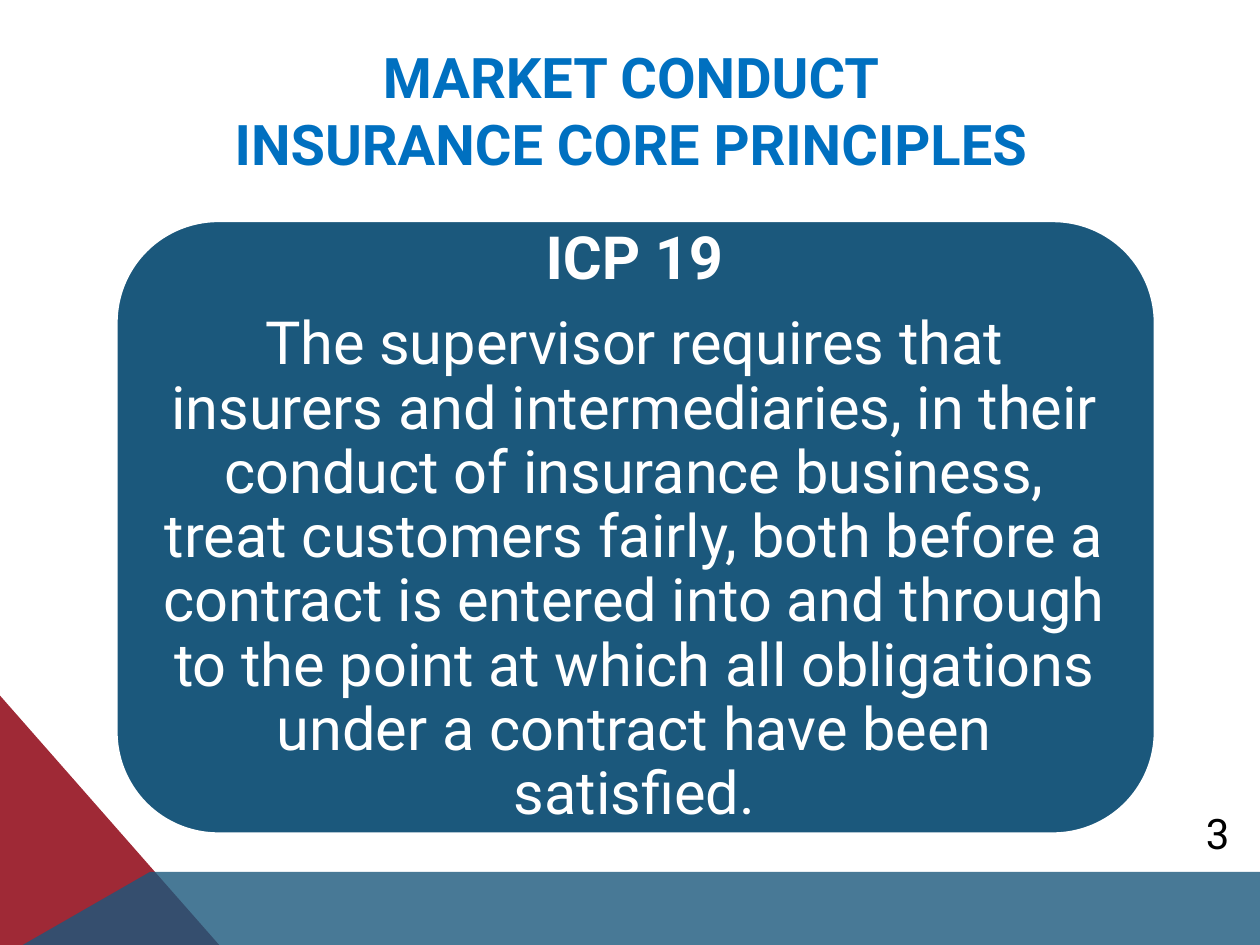
import pptx
import pptx.util
import pptx.dml.color
import pptx.enum.shapes
import pptx.enum.text
import pptx.oxml
import pptx.oxml.ns

Inches = pptx.util.Inches
Pt = pptx.util.Pt
SHAPE = pptx.enum.shapes.MSO_SHAPE
NAVY, RED, BLUE, WHITE, BLACK = "1B587C", "9F2936", "0070C0", "FFFFFF", "000000"


def color(hex_code):
    return pptx.dml.color.RGBColor.from_string(hex_code)


def paint(shape, fill=None, alpha=None, line=None):
    """Set fill, opacity in percent, and outline; drop the shadow."""
    shape.shadow.inherit = False
    if fill:
        shape.fill.solid()
        shape.fill.fore_color.rgb = color(fill)
    else:
        shape.fill.background()
    if alpha:
        tone = shape.fill._xPr.find(".//" + pptx.oxml.ns.qn("a:srgbClr"))
        tone.append(pptx.oxml.parse_xml(
            f'<a:alpha {pptx.oxml.ns.nsdecls("a")} val="{alpha * 1000}"/>'))
    if line:
        shape.line.color.rgb = color(line)
        shape.line.width = Pt(2)
    else:
        shape.line.fill.background()


def add_area(slide, points, fill, alpha=None):
    start, *rest = [(Inches(x), Inches(y)) for x, y in points]
    pen = slide.shapes.build_freeform(*start)
    pen.add_line_segments(rest, close=True)
    paint(pen.convert_to_shape(), fill, alpha)


def set_frame(frame, inset):
    frame.word_wrap = True
    frame.auto_size = pptx.enum.text.MSO_AUTO_SIZE.NONE
    frame.vertical_anchor = pptx.enum.text.MSO_ANCHOR.MIDDLE
    frame.margin_left = frame.margin_right = Inches(inset)
    frame.margin_top = frame.margin_bottom = Inches(inset)


def style(para, size, tint, bold=False):
    para.alignment = pptx.enum.text.PP_ALIGN.CENTER
    font = para.font
    font.name, font.size, font.bold = "Roboto", Pt(size), bold
    font.color.rgb = color(tint)


def add_title(slide, text):
    title = slide.shapes.title
    title.left, title.top = Inches(0.9), Inches(0.33)
    title.width, title.height = Inches(8.22), Inches(1.08)
    set_frame(title.text_frame, 0.05)
    para = title.text_frame.paragraphs[0]
    para.text = text
    style(para, 32, BLUE, bold=True)


def add_number(slide, text):
    oval = slide.shapes.add_shape(
        SHAPE.OVAL, Inches(9.33), Inches(6.33), Inches(0.67), Inches(0.55))
    paint(oval)
    set_frame(oval.text_frame, 0.01)
    para = oval.text_frame.paragraphs[0]
    para.text = text
    style(para, 24, BLACK)


def add_card(slide, head, body):
    group = slide.shapes.add_group_shape()
    panel = group.shapes.add_shape(
        SHAPE.ROUNDED_RECTANGLE, Inches(0.92), Inches(1.75), Inches(8.25), Inches(4.87))
    paint(panel, NAVY, line=WHITE)
    box = group.shapes.add_textbox(Inches(1.15), Inches(1.99), Inches(7.77), Inches(4.4))
    frame = box.text_frame
    set_frame(frame, 0.14)
    frame.text = head + "\n" + body
    for para, bold in zip(frame.paragraphs, (True, False)):
        style(para, 34, WHITE, bold)
        para.line_spacing = 0.9
        para.space_after = Pt(12)


def main():
    deck = pptx.Presentation()
    deck.slide_width, deck.slide_height = Inches(10), Inches(7.5)
    slide = deck.slides.add_slide(deck.slide_layouts[5])

    # Corner wedge and footer band
    add_area(slide, [(0, 5.52), (1.74, 7.5), (0, 7.5)], RED)
    add_area(slide, [(0.18, 7.5), (1.19, 6.92), (10, 6.92), (10, 7.5)], NAVY, alpha=80)

    # Title, page number and principle
    add_title(slide, "MARKET CONDUCT\vINSURANCE CORE PRINCIPLES")
    add_number(slide, "3")
    add_card(
        slide,
        "ICP 19",
        "The supervisor requires that insurers and intermediaries, in their conduct "
        "of insurance business, treat customers fairly, both before a contract is "
        "entered into and through to the point at which all obligations under a "
        "contract have been satisfied.")
    deck.save("out.pptx")


if __name__ == "__main__":
    main()
